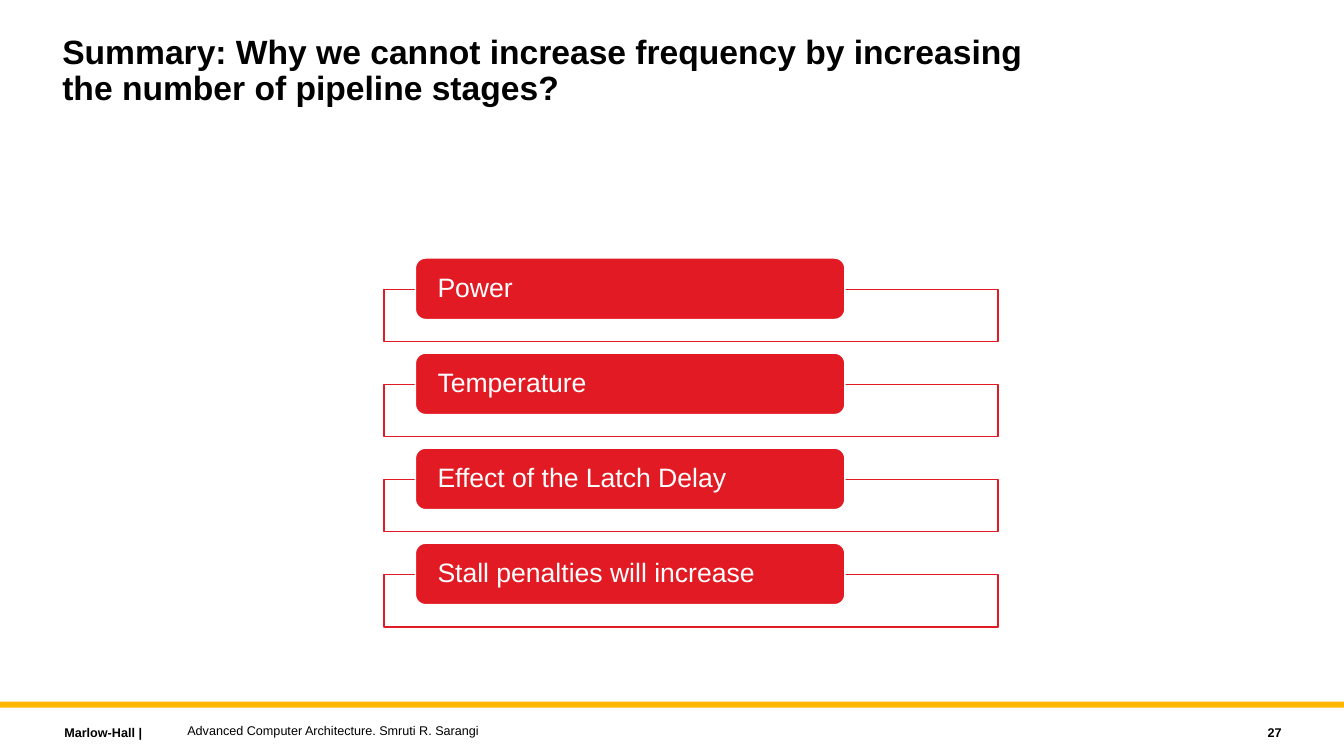
from pptx import Presentation
from pptx.dml.color import RGBColor
from pptx.enum.shapes import MSO_SHAPE
from pptx.enum.text import MSO_ANCHOR, PP_ALIGN
from pptx.util import Inches, Pt

FONT = "Arial"
RED, WHITE, BLACK, AMBER = "E21A23", "FFFFFF", "000000", "FFB600"
REASONS = [
    "Power",
    "Temperature",
    "Effect of the Latch Delay",
    "Stall penalties will increase",
]
FIRST_TOP = 2.56
ROW_STEP = 0.943


def color(value):
    return RGBColor.from_string(value)


def write_text(shape, text, size, text_color, bold=False, spacing=None,
               align=PP_ALIGN.LEFT, anchor=MSO_ANCHOR.MIDDLE):
    frame = shape.text_frame
    frame.word_wrap = True
    frame.vertical_anchor = anchor
    paragraph = frame.paragraphs[0]
    paragraph.alignment = align
    if spacing:
        paragraph.line_spacing = spacing
    run = paragraph.add_run()
    run.text = text
    run.font.name = FONT
    run.font.size = Pt(size)
    run.font.bold = bold
    run.font.color.rgb = color(text_color)


def add_text(slide, box, text, size, **style):
    shape = slide.shapes.add_textbox(*map(Inches, box))
    write_text(shape, text, size, BLACK, **style)


def add_block(slide, kind, box, fill, line=None):
    shape = slide.shapes.add_shape(kind, *map(Inches, box))
    shape.shadow.inherit = False
    shape.fill.solid()
    shape.fill.fore_color.rgb = color(fill)
    if line:
        shape.line.color.rgb = color(line)
        shape.line.width = Pt(1)
    else:
        shape.line.fill.background()
    return shape


def add_reason(slide, top, text):
    add_block(slide, MSO_SHAPE.RECTANGLE, (3.81, top + 0.31, 6.09, 0.52), WHITE, RED)
    label = add_block(slide, MSO_SHAPE.ROUNDED_RECTANGLE, (4.12, top, 4.26, 0.61), RED, WHITE)
    frame = label.text_frame
    frame.margin_left = frame.margin_right = Inches(0.19)
    frame.margin_top = frame.margin_bottom = Inches(0)
    write_text(label, text, 19, WHITE, spacing=0.9)


def add_footer(slide):
    add_block(slide, MSO_SHAPE.RECTANGLE, (0, 6.96, 13.33, 0.06), AMBER)
    add_text(slide, (0.54, 7.14, 1.2, 0.25), "Marlow-Hall\u00a0\u00a0 |".replace("\u00a0\u00a0 ", " "), 9, bold=True)
    add_text(slide, (1.76, 7.12, 8, 0.25), "Advanced Computer Architecture. Smruti R. Sarangi", 9)
    add_text(slide, (11.41, 7.14, 1.4, 0.25), "27", 9, bold=True, align=PP_ALIGN.RIGHT)


def main():
    presentation = Presentation()
    presentation.slide_width = Inches(13.33)
    presentation.slide_height = Inches(7.5)
    slide = presentation.slides.add_slide(presentation.slide_layouts[6])
    add_text(slide, (0.52, 0.3, 10, 0.9),
             "Summary: Why we cannot increase frequency by increasing "
             "the number of pipeline stages?",
             24, bold=True, spacing=0.9, anchor=MSO_ANCHOR.TOP)
    for row, reason in enumerate(REASONS):
        add_reason(slide, FIRST_TOP + row * ROW_STEP, reason)
    add_footer(slide)
    presentation.save("out.pptx")


if __name__ == "__main__":
    main()
